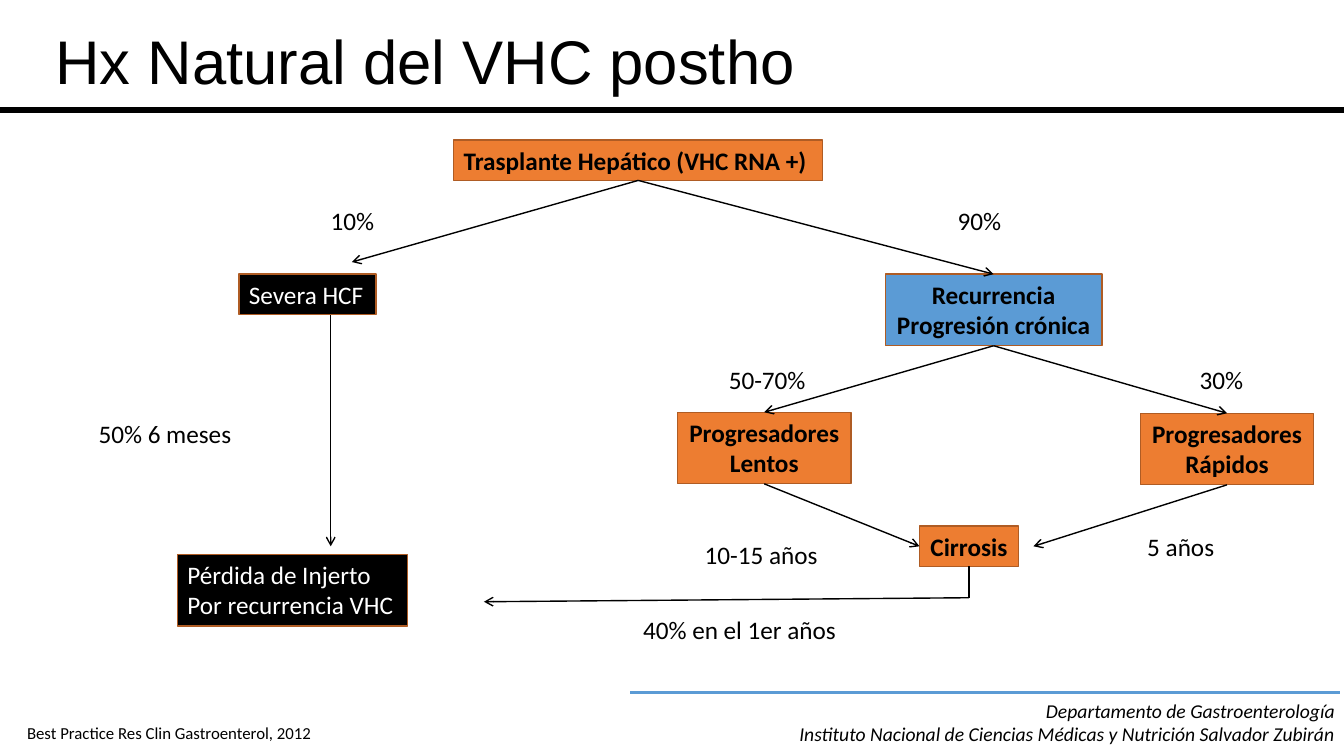
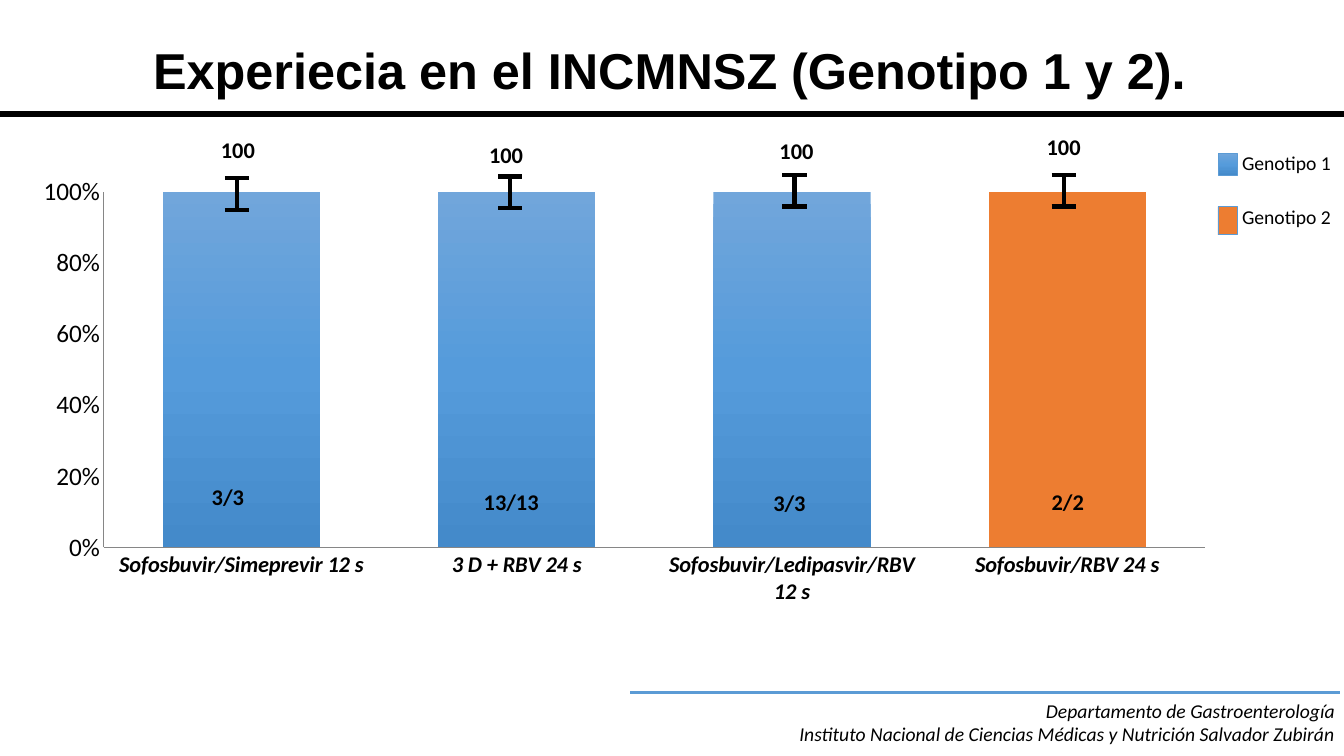
from copy import deepcopy
from dataclasses import dataclass

from lxml import etree
from pptx import Presentation
from pptx.chart.data import CategoryChartData
from pptx.dml.color import RGBColor
from pptx.enum import chart as ch, shapes, text
from pptx.oxml import parse_xml
from pptx.oxml.ns import nsdecls, qn
from pptx.util import Inches, Pt

LEFT, CENTER, RIGHT = text.PP_ALIGN.LEFT, text.PP_ALIGN.CENTER, text.PP_ALIGN.RIGHT
TOP, WEST, BOTTOM = 0, 1, 2  # connection sites of a rectangle


@dataclass(frozen=True)
class Theme:
    black: str = "000000"
    white: str = "FFFFFF"
    orange: str = "ED7D31"
    edge: str = "AF5C24"
    blue: str = "5B9BD5"
    axis: str = "868686"
    gradient: tuple = ("71A6DB", "559BDB", "448ACA")
    title_font: str = "Arial"
    body_font: str = "Calibri"
    body: int = 18
    value: int = 16
    small: int = 14
    source: int = 12


T = Theme()


@dataclass(frozen=True)
class Box:
    x: float
    y: float
    w: float
    h: float

    def sub(self, dx, dy, w=0, h=0):
        return Box(self.x + dx, self.y + dy, w, h)

    def point(self, dx, dy):
        return self.x + dx, self.y + dy

    def emu(self):
        return [Inches(v) for v in (self.x, self.y, self.w, self.h)]


def rgb(color):
    return RGBColor.from_string(color)


def style_font(font, size, color=T.black, name=T.body_font, bold=False, italic=False):
    font.name, font.size = name, Pt(size)
    font.bold, font.italic = bold, italic
    font.color.rgb = rgb(color)


def write(tf, lines, align=LEFT, **font):
    tf.word_wrap = False
    tf.auto_size = text.MSO_AUTO_SIZE.SHAPE_TO_FIT_TEXT
    tf.vertical_anchor = text.MSO_ANCHOR.TOP
    for i, line in enumerate(lines):
        p = tf.add_paragraph() if i else tf.paragraphs[0]
        p.alignment = align
        r = p.add_run()
        r.text = line
        style_font(r.font, **font)


def label(s, box, *lines, align=LEFT, size=T.body, **font):
    sp = s.shapes.add_textbox(*box.emu())
    write(sp.text_frame, lines, align, size=size, **font)


def rect(s, box, fill, line, width):
    sp = s.shapes.add_shape(shapes.MSO_SHAPE.RECTANGLE, *box.emu())
    sp.shadow.inherit = False
    sp.fill.solid()
    sp.fill.fore_color.rgb = rgb(fill)
    sp.line.color.rgb = rgb(line)
    sp.line.width = Pt(width)
    return sp


def node(s, box, lines, fill=T.orange, align=CENTER, color=T.black, bold=True):
    sp = rect(s, box, fill, T.edge, 1)
    write(sp.text_frame, lines, align, size=T.body, color=color, bold=bold)
    return sp


def line(s, start, end, width=1, color=T.black, arrow=False):
    """Joins two ends, each a point (x, y) or a glued (shape, site)."""
    glued = [not isinstance(e[0], (int, float)) for e in (start, end)]
    (x1, y1), (x2, y2) = [(0, 0) if g else e for g, e in zip(glued, (start, end))]
    cn = s.shapes.add_connector(shapes.MSO_CONNECTOR.STRAIGHT,
                                Inches(x1), Inches(y1), Inches(x2), Inches(y2))
    if glued[0]:
        cn.begin_connect(*start)
    if glued[1]:
        cn.end_connect(*end)
    cn.line.color.rgb = rgb(color)
    cn.line.width = Pt(width)
    if arrow:
        etree.SubElement(cn.line._get_or_add_ln(), qn("a:tailEnd"), type="arrow")
    etree.SubElement(cn._element.spPr, qn("a:effectLst"))


def fill_gradient(fill, parent):
    """Vertical three-stop gradient; parent is the element that holds the fill."""
    fill.gradient()
    fill.gradient_angle = 270
    stops = parent.find(".//" + qn("a:gsLst"))
    stops.insert(1, deepcopy(stops[0]))
    for stop, position, color in zip(fill.gradient_stops, (0, 0.5, 1), T.gradient):
        stop.position = position
        stop.color.rgb = rgb(color)


def title(s, box, words, size, align=LEFT, bold=False):
    sp = s.shapes.title
    sp.left, sp.top, sp.width, sp.height = box.emu()
    tf = sp.text_frame
    tf.vertical_anchor = text.MSO_ANCHOR.MIDDLE
    p = tf.paragraphs[0]
    p.alignment, p.line_spacing = align, 0.9
    r = p.add_run()
    r.text = words
    style_font(r.font, size, name=T.title_font, bold=bold)


def title_rule(s, y):
    line(s, (0, y), (13.33, y), 4)


def footer(s, box):
    line(s, box.point(0, 0), box.point(box.w, 0), 1.5, T.blue)
    label(s, box.sub(1.48, 0.01, 5.61, 0.57),
          "Departamento de Gastroenterología",
          "Instituto Nacional de Ciencias Médicas y Nutrición Salvador Zubirán",
          align=RIGHT, size=T.small, italic=True)


def flow(s, box):
    dark = dict(fill=T.black, align=LEFT, color=T.white, bold=False)
    one, two = 0.4, 0.71  # heights for one and two lines
    transplant = node(s, box.sub(3.62, 0, 3.66, one),
                      ["Trasplante Hepático (VHC RNA +)"], align=LEFT)
    node(s, box.sub(1.49, 1.33, 1.36, one), ["Severa HCF"], **dark)
    node(s, box.sub(0.88, 4.11, 2.28, two),
         ["Pérdida de Injerto", "Por recurrencia VHC"], **dark)
    recurrence = node(s, box.sub(7.9, 1.33, 2.15, two),
                      ["Recurrencia", "Progresión crónica"], fill=T.blue)
    fast = node(s, box.sub(10.43, 2.71, 1.72, two), ["Progresadores", "Rápidos"])
    slow = node(s, box.sub(5.84, 2.7, 1.72, two), ["Progresadores", "Lentos"])
    cirrhosis = node(s, box.sub(8.24, 3.83, 0.98, one), ["Cirrosis"])

    corner = box.point(8.73, 4.54)
    for start, end in [
        ((transplant, BOTTOM), (recurrence, TOP)),
        ((transplant, BOTTOM), box.point(2.61, 1.21)),
        (box.point(2.4, 1.74), box.point(2.4, 4.03)),
        ((recurrence, BOTTOM), (slow, TOP)),
        ((recurrence, BOTTOM), (fast, TOP)),
        ((fast, BOTTOM), box.point(9.37, 4.03)),
        ((slow, BOTTOM), (cirrhosis, WEST)),
        (corner, box.point(3.92, 4.58)),
    ]:
        line(s, start, end, arrow=True)
    line(s, (cirrhosis, BOTTOM), corner)

    for dx, dy, w, words in [
        (2.3, 0.6, 0.64, "10%"), (8.52, 0.6, 0.64, "90%"),
        (6.25, 2.18, 0.97, "50-70%"), (10.92, 2.18, 0.64, "30%"),
        (10.4, 3.83, 0.88, "5 años"), (6.01, 3.91, 1.34, "10-15 años"),
        (5.4, 4.66, 2.14, "40% en el 1er años"), (0, 2.71, 1.53, "50% 6 meses"),
    ]:
        label(s, box.sub(dx, dy, w, one), words)


def response_chart(s, box):
    data = CategoryChartData(number_format="0%")
    data.categories = ["Sofosbuvir/Simeprevir 12 s", "3 D + RBV 24 s",
                       "Sofosbuvir/Ledipasvir/RBV 12 s", "Sofosbuvir/RBV 24 s"]
    data.add_series("Series 1", [1, 1, 1, 1])
    chart = s.shapes.add_chart(ch.XL_CHART_TYPE.COLUMN_CLUSTERED, *box.emu(), data).chart
    chart.has_legend = chart.has_title = False
    style_font(chart.font, T.body)

    plot = chart.plots[0]
    plot.gap_width, plot.vary_by_categories = 75, False
    ser = plot.series[0]
    fill_gradient(ser.format.fill, ser._element)
    genotype2 = ser.points[3].format.fill
    genotype2.solid()
    genotype2.fore_color.rgb = rgb(T.orange)

    cat, val = chart.category_axis, chart.value_axis
    for axis in (cat, val):
        axis.has_major_gridlines = False
        axis.major_tick_mark = axis.minor_tick_mark = ch.XL_TICK_MARK.NONE
        axis.format.line.color.rgb = rgb(T.axis)
        axis.format.line.width = Pt(0.75)
    style_font(cat.tick_labels.font, T.value, bold=True, italic=True)
    style_font(val.tick_labels.font, T.body)
    val.minimum_scale, val.maximum_scale, val.major_unit = 0, 1, 0.2
    val.tick_labels.number_format = "0%"
    val.tick_labels.number_format_is_linked = False

    area = chart._chartSpace.chart.plotArea
    for old in area.findall(qn("c:layout")):
        area.remove(old)
    sizes = "".join(f'<c:{k} val="{v}"/>' for k, v in
                    dict(x=0.07, y=0.055, w=0.91, h=0.8).items())
    area.insert(0, parse_xml(
        f'<c:layout {nsdecls("c")}><c:manualLayout><c:layoutTarget val="inner"/>'
        f'<c:xMode val="edge"/><c:yMode val="edge"/>{sizes}'
        '</c:manualLayout></c:layout>'))


def error_bar(s, x, top, height=0.31, cap=0.12):
    line(s, (x, top), (x, top + height), 3)
    for y in (top, top + height):
        line(s, (x - cap, y), (x + cap, y), 3)


def bar_marks(s, box):
    """Error bar, percentage and patient count of each column."""
    w = 0.8
    for bar_x, bar_y, pct_x, pct_y, n_x, n_y, count in [
        (2.16, 0.11, 2.17, -0.36, 2.07, 3.08, "3/3"),
        (4.87, 0.09, 4.83, -0.31, 4.88, 3.13, "13/13"),
        (7.69, 0.08, 7.71, -0.35, 7.64, 3.14, "3/3"),
        (10.36, 0.08, 10.36, -0.39, 10.4, 3.13, "2/2"),
    ]:
        error_bar(s, *box.point(bar_x, bar_y))
        for x, y, words in [(pct_x, pct_y, "100"), (n_x, n_y, count)]:
            label(s, box.sub(x - w / 2, y, w, 0.37), words,
                  align=CENTER, size=T.value, bold=True)


def legend(s, box):
    for i, (name, key_h) in enumerate([("Genotipo 1", 0.22), ("Genotipo 2", 0.28)]):
        row = box.sub(0, i * 0.53)
        key = rect(s, row.sub(0, 0.07, 0.19, key_h), T.orange, T.blue, 0.5)
        if i == 0:
            fill_gradient(key.fill, key._element)
        label(s, row.sub(0.14, 0, 1.09, 0.34), name, size=T.small)


def natural_history(s):
    title(s, Box(0.45, 0.02, 12, 1.25), "Hx Natural del VHC postho", 44)
    title_rule(s, 1.09)
    flow(s, Box(0.88, 1.39, 12.15, 5.06))
    label(s, Box(0.17, 7.12, 3.07, 0.3),
          "Best Practice Res Clin Gastroenterol, 2012", size=T.source)


def experience(s):
    title(s, Box(0.03, 0, 13.23, 1.45), "Experiecia en el INCMNSZ (Genotipo 1 y 2).",
          36, CENTER, bold=True)
    title_rule(s, 1.13)
    columns = Box(0.19, 1.66, 12, 4.41)
    response_chart(s, columns)
    bar_marks(s, columns)
    legend(s, Box(12.08, 1.45, 1.23, 0.87))


def main():
    prs = Presentation()
    prs.slide_width, prs.slide_height = Inches(13.33), Inches(7.5)
    for build in (natural_history, experience):
        s = prs.slides.add_slide(prs.slide_layouts[5])
        build(s)
        footer(s, Box(6.25, 6.87, 7.04, 0.58))
    prs.save("out.pptx")


if __name__ == "__main__":
    main()
